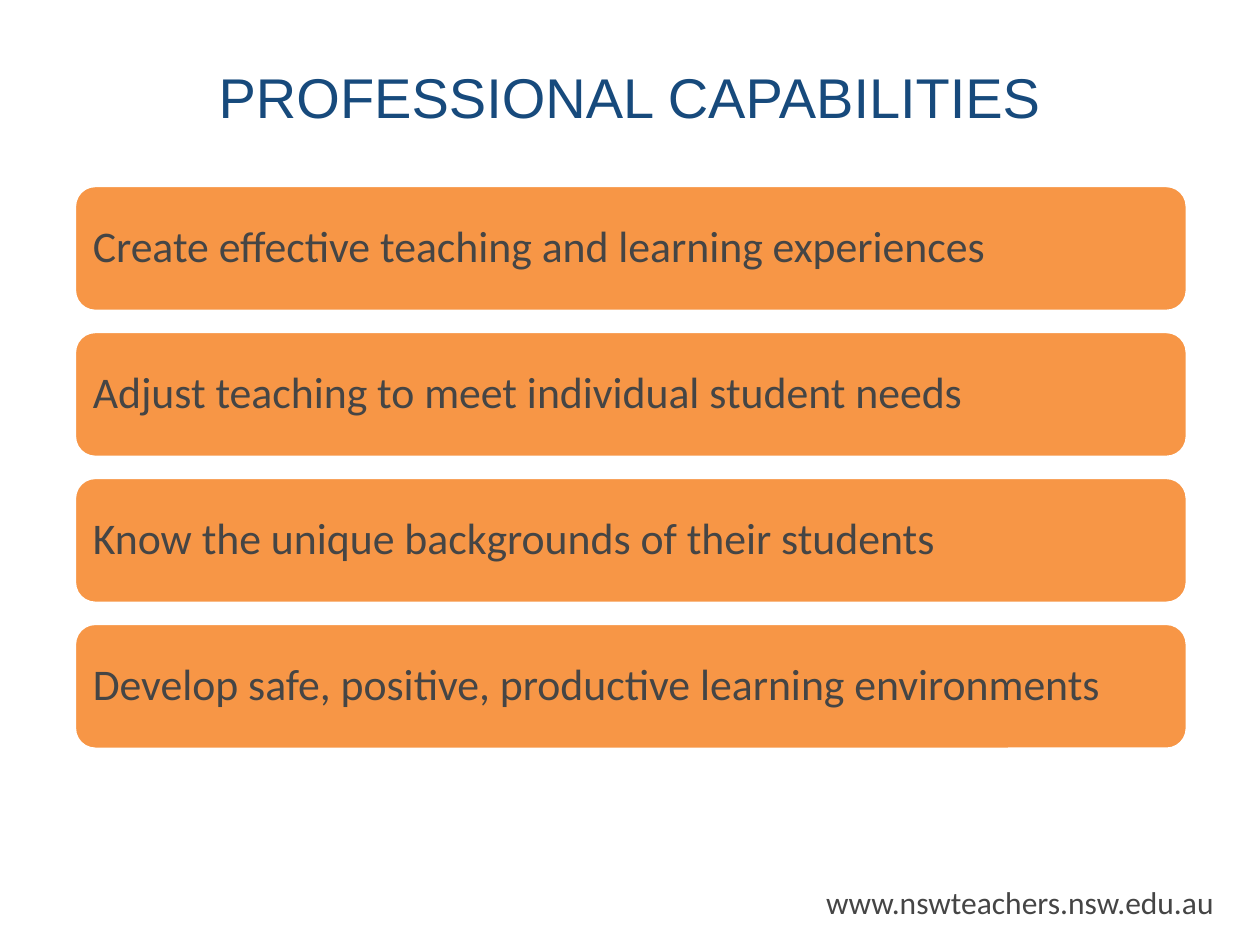
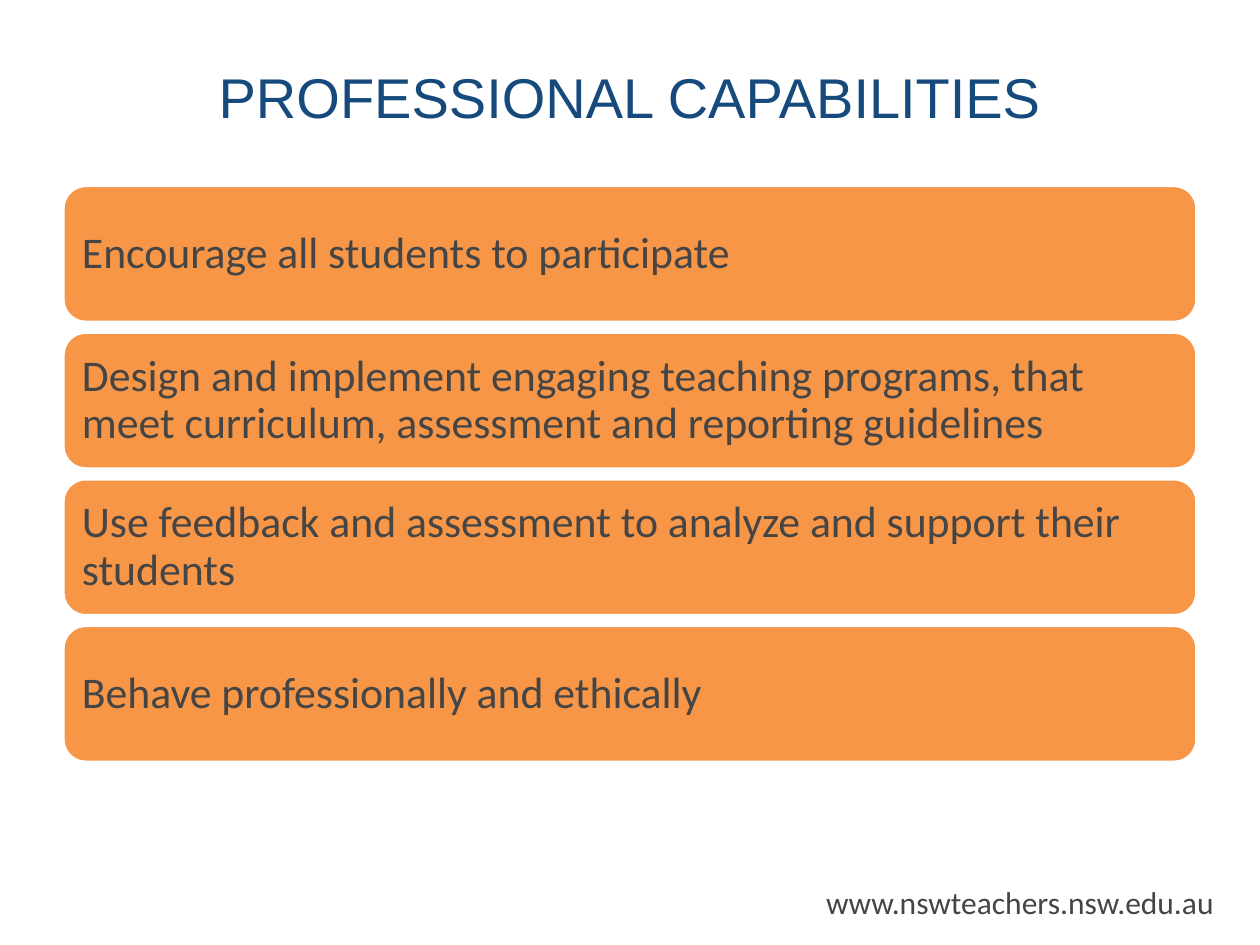
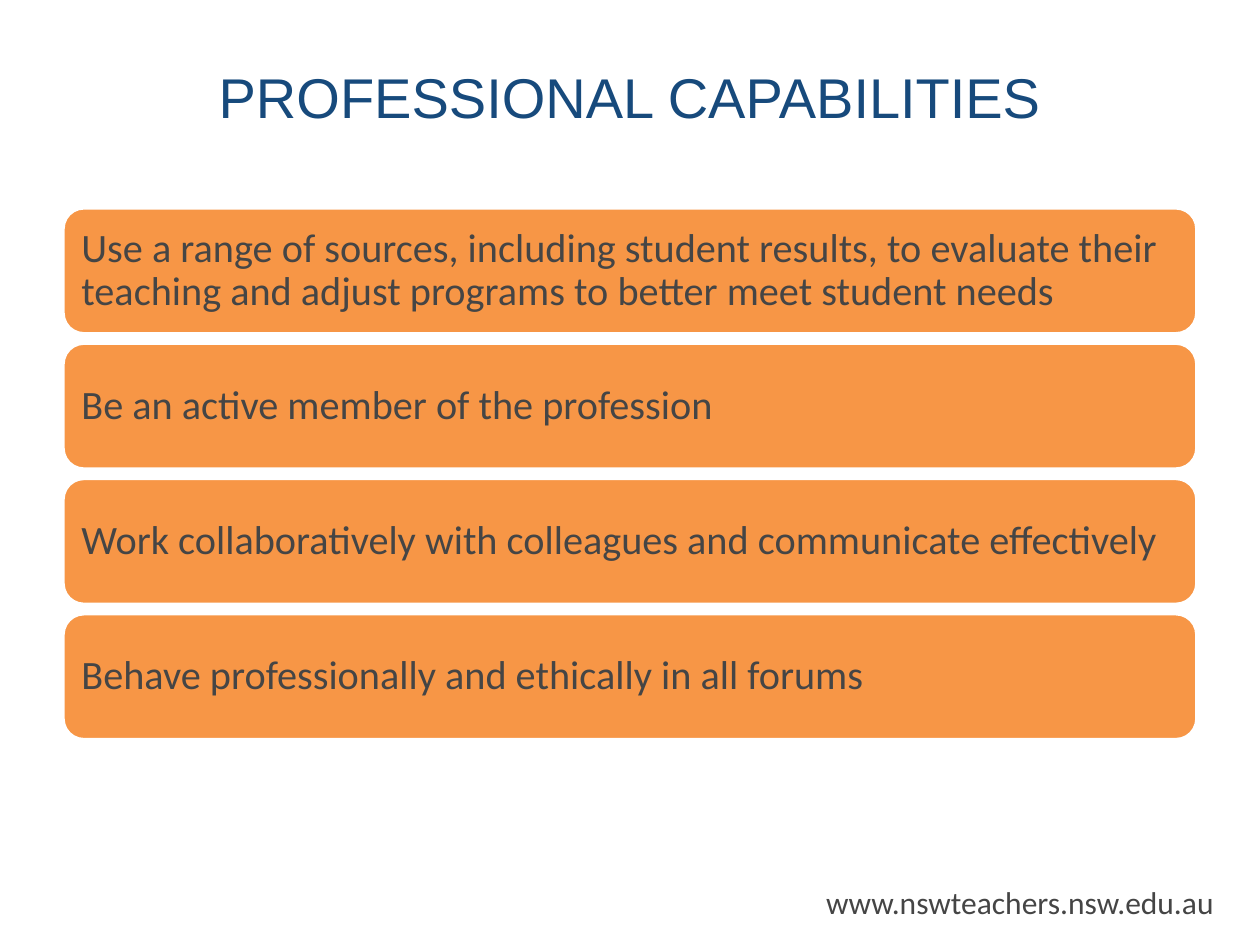
"""Build three slides of stacked statements on professional capabilities."""
from pptx import Presentation
from pptx import util as u
from pptx.dml import color
from pptx.enum import shapes, text

COLORS = {"title": "174A7C", "bar": "F79646", "body": "454545", "paper": "FFFFFF"}
TITLE = "PROFESSIONAL CAPABILITIES"
FOOTER = "www.nswteachers.nsw.edu.au"

SLIDES = [
    {"left": 42.5, "top": 106, "width": 636, "height": 72, "pitch": 83.4, "size": 25,
     "statements": ["Create effective teaching and learning experiences",
                    "Adjust teaching to meet individual student needs",
                    "Know the unique backgrounds of their students",
                    "Develop safe, positive, productive learning environments"]},
    {"left": 36, "top": 106, "width": 648, "height": 78.2, "pitch": 83.8, "size": 25,
     "statements": ["Encourage all students to participate",
                    "Design and implement engaging teaching programs, that meet "
                    "curriculum, assessment and reporting guidelines",
                    "Use feedback and assessment to analyze and support their students",
                    "Behave professionally and ethically"]},
    {"left": 36, "top": 118.8, "width": 648, "height": 72, "pitch": 77.3, "size": 23,
     "statements": ["Use a range of sources, including student results, to evaluate "
                    "their teaching and adjust programs to better meet student needs",
                    "Be an active member of the profession",
                    "Work collaboratively with colleagues and communicate effectively",
                    "Behave professionally and ethically in all forums"]},
]


def write(shape, words, font, size, ink, alignment):
    """Write one run of vertically centred text and return its paragraph."""
    shape.text_frame.vertical_anchor = text.MSO_ANCHOR.MIDDLE
    paragraph = shape.text_frame.paragraphs[0]
    paragraph.alignment = alignment
    run = paragraph.add_run()
    run.text = words
    run.font.name = font
    run.font.size = u.Pt(size)
    run.font.color.rgb = color.RGBColor.from_string(COLORS[ink])
    return paragraph


def add_box(slide, preset, left, top, width, height, fill):
    """Add a filled shape without shadow, outlined in the paper colour."""
    shape = slide.shapes.add_shape(preset, u.Pt(left), u.Pt(top), u.Pt(width), u.Pt(height))
    shape.shadow.inherit = False
    shape.fill.solid()
    shape.fill.fore_color.rgb = color.RGBColor.from_string(COLORS[fill])
    shape.line.color.rgb = color.RGBColor.from_string(COLORS["paper"])
    shape.line.width = u.Pt(2)
    return shape


presentation = Presentation()
presentation.slide_width = u.Pt(720)
presentation.slide_height = u.Pt(540)

for content in SLIDES:
    slide = presentation.slides.add_slide(presentation.slide_layouts[6])

    for row, statement in enumerate(content["statements"]):
        bar = add_box(slide, shapes.MSO_SHAPE.ROUNDED_RECTANGLE, content["left"],
                      content["top"] + row * content["pitch"],
                      content["width"], content["height"], "bar")
        frame = bar.text_frame
        frame.word_wrap = True
        frame.margin_left = frame.margin_right = u.Pt(7.2)
        frame.margin_top = frame.margin_bottom = u.Pt(7.2)
        paragraph = write(bar, statement, "Calibri", content["size"], "body", text.PP_ALIGN.LEFT)
        paragraph.line_spacing = 0.9

    title = slide.shapes.add_textbox(u.Pt(36), u.Pt(31), u.Pt(648), u.Pt(47.5))
    title.text_frame.word_wrap = True
    write(title, TITLE, "Arial", 32, "title", text.PP_ALIGN.CENTER)

    footer = add_box(slide, shapes.MSO_SHAPE.RECTANGLE, 465, 501, 238.5, 29, "paper")
    footer.line.fill.background()
    footer.text_frame.word_wrap = False
    write(footer, FOOTER, "Calibri", 18, "body", text.PP_ALIGN.LEFT)

presentation.save("out.pptx")
